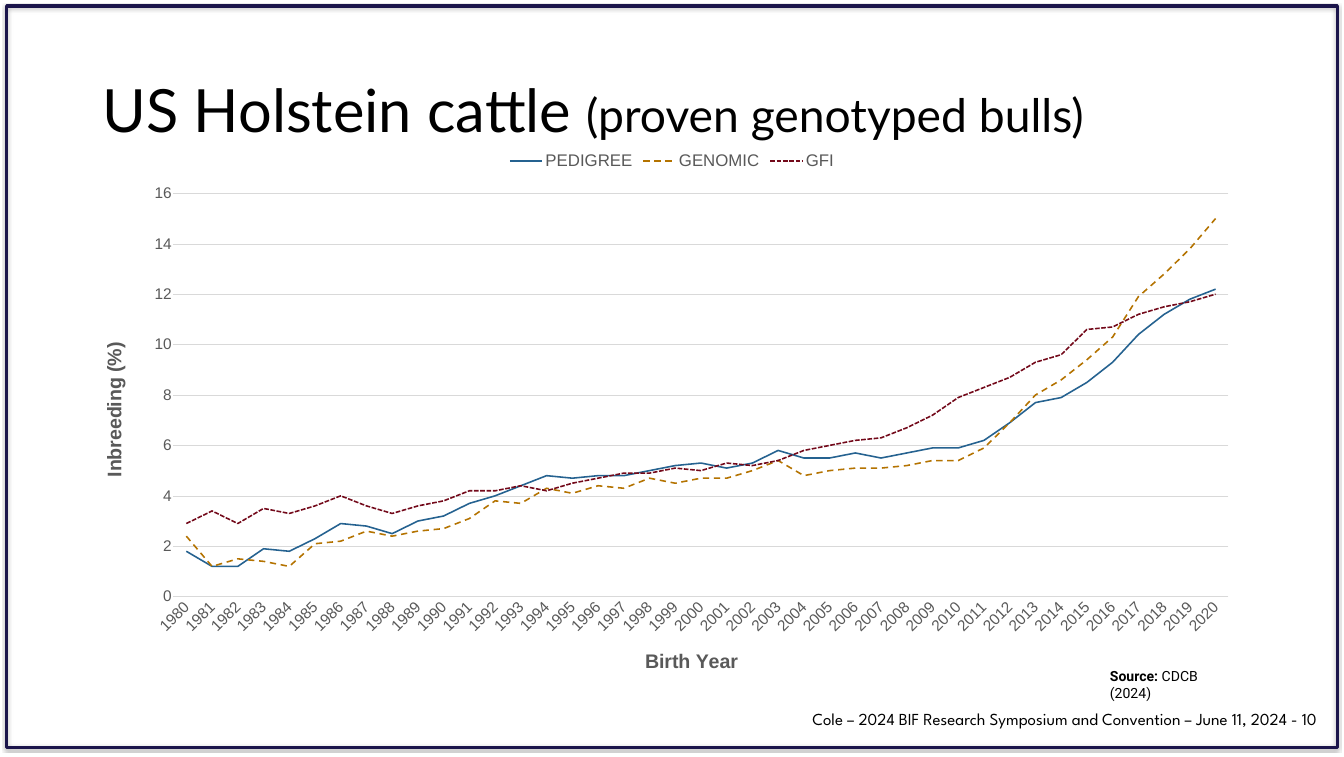
from lxml.etree import SubElement
from pptx import Presentation
from pptx.chart.data import CategoryChartData
from pptx.dml.color import RGBColor
from pptx.enum.chart import XL_CHART_TYPE as ChartType, XL_LEGEND_POSITION as LegendPos, XL_TICK_MARK as Tick
from pptx.enum.dml import MSO_LINE as Dash
from pptx.enum.shapes import MSO_SHAPE as Shape
from pptx.enum.text import MSO_ANCHOR as Anchor, MSO_AUTO_SIZE as AutoSize, PP_ALIGN as Align
from pptx.oxml import parse_xml
from pptx.oxml.ns import nsdecls, qn
from pptx.util import Inches, Pt

# Content
COLORS = {"frame": "1B154B", "text": "000000", "label": "595959", "grid": "D9D9D9",
          "pedigree": "256290", "genomic": "B47300", "gfi": "73091A"}
TITLE = [("US Holstein cattle ", {"name": "Lato", "size": Pt(85)}),
         ("(proven genotyped bulls)", {"name": "Lato", "size": Pt(66)})]
FOOTER = [("Cole – 2024 BIF Research Symposium and Convention – June 11, 2024 - 10",
           {"name": "League Spartan", "size": Pt(24)})]
SOURCE = [("Source:", {"name": "Roboto", "size": Pt(20), "bold": True}),
          (" CDCB (2024)", {"name": "Roboto", "size": Pt(20), "bold": False})]
YEARS = [str(year) for year in range(1980, 2021)]
INBREEDING = [
    ("PEDIGREE", "pedigree", Dash.SOLID,
     [1.8, 1.2, 1.2, 1.9, 1.8, 2.3, 2.9, 2.8, 2.5, 3, 3.2, 3.7, 4, 4.4, 4.8, 4.7, 4.8, 4.8, 5, 5.2, 5.3,
      5.1, 5.3, 5.8, 5.5, 5.5, 5.7, 5.5, 5.7, 5.9, 5.9, 6.2, 6.9, 7.7, 7.9, 8.5, 9.3, 10.4, 11.2, 11.8, 12.2]),
    ("GENOMIC", "genomic", Dash.DASH,
     [2.4, 1.2, 1.5, 1.4, 1.2, 2.1, 2.2, 2.6, 2.4, 2.6, 2.7, 3.1, 3.8, 3.7, 4.3, 4.1, 4.4, 4.3, 4.7, 4.5, 4.7,
      4.7, 5, 5.4, 4.8, 5, 5.1, 5.1, 5.2, 5.4, 5.4, 5.9, 6.9, 8, 8.6, 9.4, 10.3, 11.9, 12.8, 13.8, 15]),
    ("GFI", "gfi", Dash.SQUARE_DOT,
     [2.9, 3.4, 2.9, 3.5, 3.3, 3.6, 4, 3.6, 3.3, 3.6, 3.8, 4.2, 4.2, 4.4, 4.2, 4.5, 4.7, 4.9, 4.9, 5.1, 5,
      5.3, 5.2, 5.4, 5.8, 6, 6.2, 6.3, 6.7, 7.2, 7.9, 8.3, 8.7, 9.3, 9.6, 10.6, 10.7, 11.2, 11.5, 11.7, 12]),
]
PLOT_AREA = {"x": 0.07, "y": 0.09, "w": 0.91, "h": 0.74}


def box(*lengths):
    return [Inches(length) for length in lengths]


def rgb(name):
    return RGBColor.from_string(COLORS[name])


def style_font(font, color, **formats):
    for attribute, value in formats.items():
        setattr(font, attribute, value)
    font.color.rgb = rgb(color)


def style_line(line, color, width, dash=Dash.SOLID):
    line.color.rgb = rgb(color)
    line.width = Pt(width)
    line.dash_style = dash


def write_text(frame, runs, inset, **formats):
    frame.word_wrap = True
    frame.margin_left = frame.margin_right = Inches(inset)
    frame.margin_top = frame.margin_bottom = Inches(inset / 2)
    paragraph = frame.paragraphs[0]
    for attribute, value in formats.items():
        setattr(paragraph, attribute, value)
    for text, font_formats in runs:
        run = paragraph.add_run()
        run.text = text
        style_font(run.font, "text", **font_formats)


def style_axis(axis, title):
    axis.has_title = True
    axis.axis_title.text_frame.text = title
    title_font = axis.axis_title.text_frame.paragraphs[0].runs[0].font
    style_font(title_font, "label", name="Arial", size=Pt(28), bold=True)
    style_font(axis.tick_labels.font, "label", name="Arial", size=Pt(22))
    axis.major_tick_mark = axis.minor_tick_mark = Tick.NONE


prs = Presentation()
prs.slide_width, prs.slide_height = box(26.64, 15)
slide = prs.slides.add_slide(prs.slide_layouts[5])

# Title
title = slide.shapes.title
title.left, title.top, title.width, title.height = box(1.83, 0.8, 22.98, 2.9)
title.text_frame.auto_size = AutoSize.NONE
title.text_frame.vertical_anchor = Anchor.MIDDLE
write_text(title.text_frame, TITLE, 0.2, alignment=Align.LEFT, line_spacing=0.9)

# Frame with a soft shadow
border = slide.shapes.add_shape(Shape.RECTANGLE, *box(0.13, 0.12, 26.38, 14.69))
border.fill.background()
style_line(border.line, "frame", 4.5)
border._element.spPr.append(parse_xml(
    f'<a:effectLst {nsdecls("a")}>'
    f'<a:outerShdw blurRad="{Pt(3)}" dist="{Pt(1.8)}" dir="5400000" rotWithShape="0">'
    f'<a:srgbClr val="{COLORS["text"]}"><a:alpha val="35000"/></a:srgbClr>'
    '</a:outerShdw></a:effectLst>'))

# Inbreeding chart
chart_data = CategoryChartData(number_format="General")
chart_data.categories = YEARS
for name, _, _, values in INBREEDING:
    chart_data.add_series(name, values)
chart = slide.shapes.add_chart(ChartType.LINE, *box(1.83, 2.86, 22.98, 10.8), chart_data).chart
chart.has_title = False
style_font(chart.font, "text", name="Arial", size=Pt(10))
chart.plots[0].vary_by_categories = False
for series, (_, color, dash, _) in zip(chart.plots[0].series, INBREEDING):
    series.smooth = False
    style_line(series.format.line, color, 2.25, dash)

chart.has_legend = True
chart.legend.position = LegendPos.TOP
chart.legend.include_in_layout = False
style_font(chart.legend.font, "label", name="Arial", size=Pt(24))

year_axis, percent_axis = chart.category_axis, chart.value_axis
style_axis(year_axis, "Birth Year")
style_line(year_axis.format.line, "grid", 0.75)
year_axis._element.find(qn("c:txPr")).find(qn("a:bodyPr")).set("rot", "-2700000")
style_axis(percent_axis, "Inbreeding (%)")
percent_axis.format.line.fill.background()
percent_axis.minimum_scale, percent_axis.maximum_scale, percent_axis.major_unit = 0, 16, 2
percent_axis.has_major_gridlines = True
style_line(percent_axis.major_gridlines.format.line, "grid", 0.75)

# Fixed plot area inside the chart
plot_area = chart._chartSpace.chart.plotArea
for layout in plot_area.findall(qn("c:layout")):
    plot_area.remove(layout)
layout = parse_xml(f'<c:layout {nsdecls("c")}/>')
plot_area.insert(0, layout)
manual = SubElement(layout, qn("c:manualLayout"))
for tag, value in {"layoutTarget": "inner", "xMode": "edge", "yMode": "edge", **PLOT_AREA}.items():
    SubElement(manual, qn(f"c:{tag}")).set("val", str(value))

# Source and footer
for place, runs, inset, alignment in [
    (box(21.8, 13.13, 3.01, 0.54), SOURCE, 0.2, Align.LEFT),
    (box(13.96, 13.99, 12.24, 0.5), FOOTER, 0.1, Align.RIGHT),
]:
    note = slide.shapes.add_textbox(*place)
    write_text(note.text_frame, runs, inset, alignment=alignment)
    note.text_frame.auto_size = AutoSize.SHAPE_TO_FIT_TEXT

prs.save("out.pptx")
